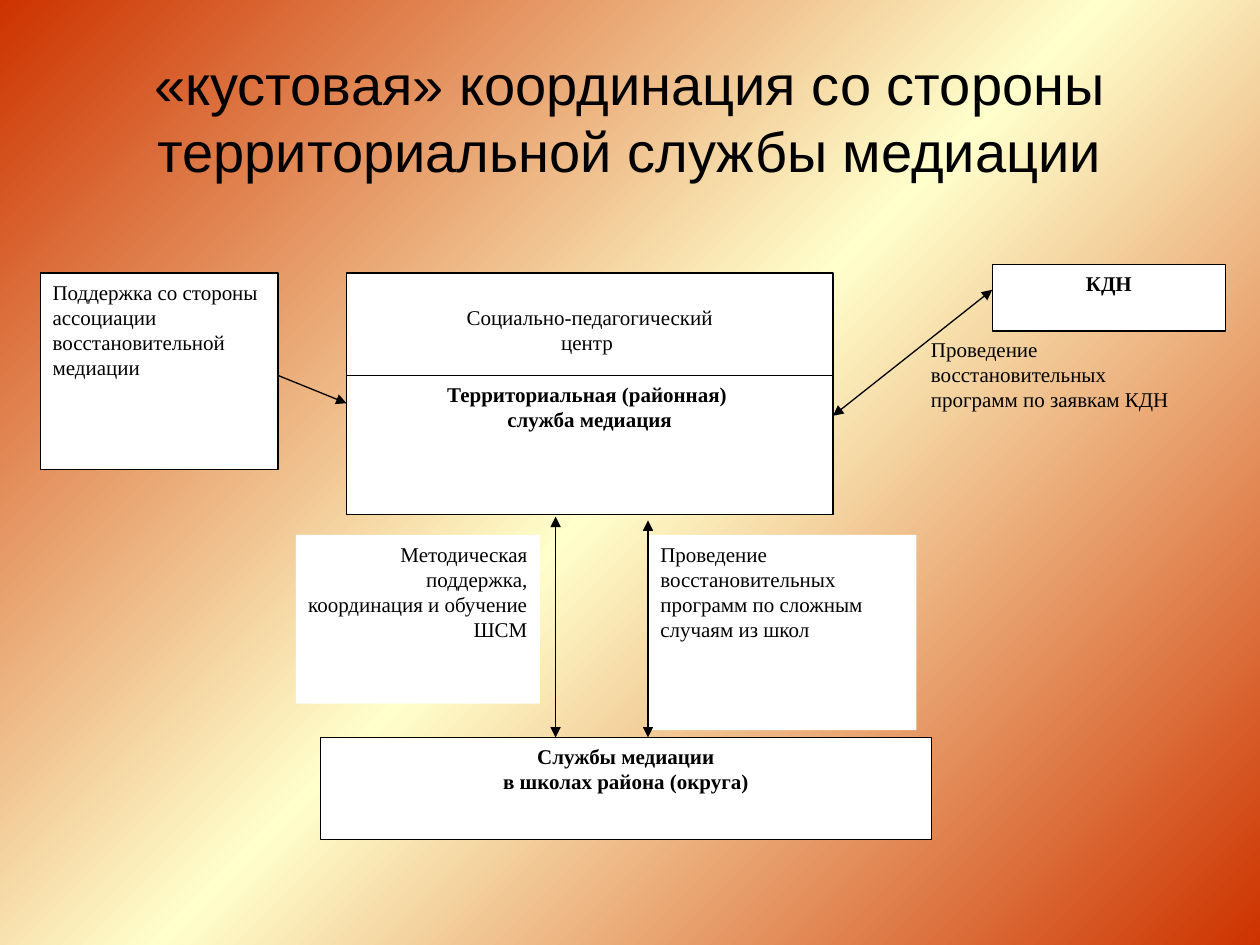
import copy
import pptx
import pptx.util
import pptx.dml.color
import pptx.enum.shapes
import pptx.enum.text
import pptx.oxml.ns
import pptx.oxml.xmlchemy

Pt = pptx.util.Pt
RGBColor = pptx.dml.color.RGBColor
ALIGN = pptx.enum.text.PP_ALIGN
ANCHOR = pptx.enum.text.MSO_ANCHOR
qn = pptx.oxml.ns.qn
Node = pptx.oxml.xmlchemy.OxmlElement

RED = RGBColor(0xCC, 0x33, 0x00)
CREAM = RGBColor(0xFF, 0xFF, 0xCC)
WHITE = RGBColor(0xFF, 0xFF, 0xFF)
BLACK = RGBColor(0, 0, 0)

BODY = {"name": "Times New Roman", "size": Pt(12), "bold": False}
BOLD = {**BODY, "bold": True}
HEAD = {"name": "Arial", "size": Pt(32), "bold": False}


def apply(item, form):
    for key, value in form.items():
        setattr(item, key, value)


def place(shape, area):
    names = ("left", "top", "width", "height")
    apply(shape, dict(zip(names, map(Pt, area))))


def paint(slide):
    fill = slide.background.fill
    fill.gradient()
    fill.gradient_angle = 315
    stops = slide.element.find(".//" + qn("a:gsLst"))
    stops.append(copy.deepcopy(stops[0]))
    for stop, spot, tone in zip(fill.gradient_stops, (0, 0.5, 1), (RED, CREAM, RED)):
        stop.position = spot
        stop.color.rgb = tone


def write(shape, lines, font, align, anchor=ANCHOR.TOP, inset=3.6):
    frame = shape.text_frame
    apply(frame, {"word_wrap": True, "vertical_anchor": anchor,
                  "margin_left": Pt(7.2), "margin_right": Pt(7.2),
                  "margin_top": Pt(inset), "margin_bottom": Pt(3.6)})
    frame.text = "\n".join(lines)
    for para in frame.paragraphs:
        para.alignment = align
        for run in para.runs:
            apply(run.font, font)
            run.font.color.rgb = BLACK


def add_title(slide, area, text):
    title = slide.shapes.title
    place(title, area)
    write(title, [text], HEAD, ALIGN.CENTER, ANCHOR.MIDDLE)


def add_box(slide, area, lines, font=BODY, align=ALIGN.LEFT, edge=True, inset=3.6):
    kind = pptx.enum.shapes.MSO_SHAPE.RECTANGLE
    box = slide.shapes.add_shape(kind, *map(Pt, area))
    box.shadow.inherit = False
    box.fill.solid()
    box.fill.fore_color.rgb = WHITE
    if edge:
        box.line.color.rgb = BLACK
        box.line.width = Pt(0.75)
    else:
        box.line.fill.background()
    write(box, lines, font, align, inset=inset)


def add_label(slide, area, text):
    label = slide.shapes.add_textbox(*map(Pt, area))
    write(label, [text], BODY, ALIGN.LEFT)


def add_arrow(slide, ends, tips=("headEnd", "tailEnd")):
    kind = pptx.enum.shapes.MSO_CONNECTOR.STRAIGHT
    arrow = slide.shapes.add_connector(kind, *map(Pt, ends))
    arrow.line.color.rgb = BLACK
    arrow.line.width = Pt(0.75)
    props = arrow._element.spPr
    line = props.find(qn("a:ln"))
    for tip in tips:
        mark = Node("a:" + tip)
        mark.set("type", "triangle")
        line.append(mark)
    props.append(Node("a:effectLst"))


def main():
    deck = pptx.Presentation()
    deck.slide_width, deck.slide_height = Pt(720), Pt(540)
    slide = deck.slides.add_slide(deck.slide_layouts[5])
    paint(slide)
    add_title(slide, (36, 21.6, 648, 90),
              "«кустовая» координация со стороны территориальной службы медиации")

    mid = ALIGN.CENTER
    add_box(slide, (198, 156, 278, 138), ["Социально-педагогический", "центр "],
            align=mid, inset=18)
    add_box(slide, (198, 214.6, 278, 79.4),
            ["Территориальная (районная) ", "служба медиация"], BOLD, mid)
    add_box(slide, (169, 305.7, 139.5, 96.5),
            ["Методическая поддержка, координация и обучение ШСМ"],
            align=ALIGN.RIGHT, edge=False)
    add_box(slide, (567, 151, 133.2, 38.2), ["КДН"], BOLD, mid)
    add_box(slide, (23, 156, 136, 112.3),
            ["Поддержка со стороны ассоциации восстановительной медиации"])
    add_box(slide, (370.3, 305.7, 153.4, 111.6),
            ["Проведение восстановительных программ по сложным случаям из школ"],
            edge=False)
    add_box(slide, (183, 421.4, 349.2, 58.3),
            ["Службы медиации", "в школах района (округа)"], BOLD, mid)

    add_arrow(slide, (159, 214.6, 198, 230.4), ("tailEnd",))
    add_arrow(slide, (317.5, 295.2, 317.5, 421.4))
    add_arrow(slide, (370.3, 297.4, 370.3, 421.4))
    add_arrow(slide, (567, 165.6, 476, 237.6))
    add_label(slide, (524.9, 188.6, 162.7, 91.4),
              "Проведение восстановительных программ по заявкам КДН")
    deck.save("out.pptx")


if __name__ == "__main__":
    main()
